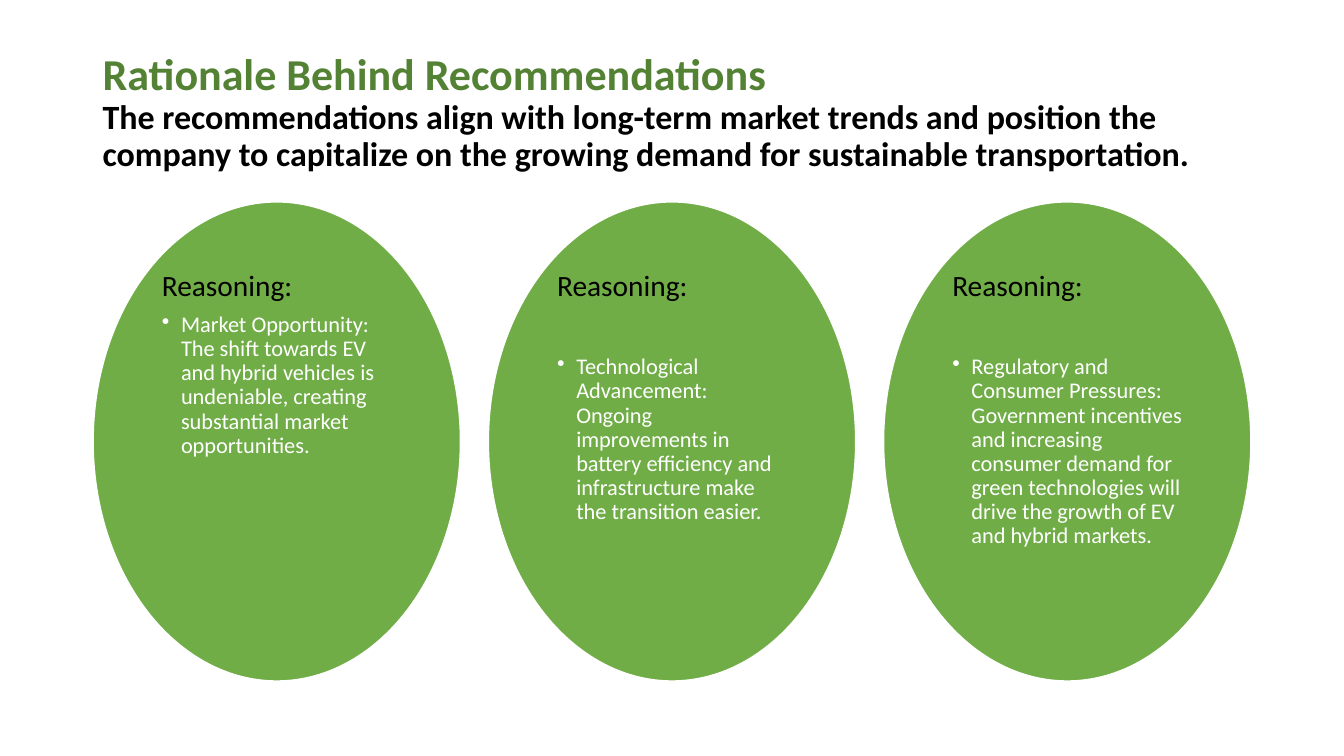
from lxml import etree
from pptx import Presentation
from pptx.dml.color import RGBColor
from pptx.enum.shapes import MSO_SHAPE
from pptx.enum.text import MSO_ANCHOR
from pptx.oxml.ns import qn
from pptx.util import Inches, Pt

OVAL = MSO_SHAPE.OVAL
MIDDLE = MSO_ANCHOR.MIDDLE

GREEN = RGBColor(0x70, 0xAD, 0x47)
DARK_GREEN = RGBColor(0x54, 0x82, 0x35)
BLACK = RGBColor(0, 0, 0)
WHITE = RGBColor(255, 255, 255)
FONT = "Calibri"

TITLE = "Rationale Behind Recommendations"
SUBTITLE = ("The recommendations align with long-term market trends and position the "
            "company to capitalize on the growing demand for sustainable transportation.")
HEADING = "Reasoning:"
# Each reason with the space in points between its heading and its bullet
REASONS = [
    ("Market Opportunity: The shift towards EV and hybrid vehicles is undeniable, "
     "creating substantial market opportunities.", 7.35),
    ("Technological Advancement: Ongoing improvements in battery efficiency and "
     "infrastructure make the transition easier.", 37.5),
    ("Regulatory and Consumer Pressures: Government incentives and increasing consumer "
     "demand for green technologies will drive the growth of EV and hybrid markets.", 37.5),
]

OVAL_LEFT, OVAL_TOP, OVAL_WIDTH, OVAL_HEIGHT = 0.92, 2.0, 3.65, 4.76
OVAL_PITCH = 3.92
TEXT_WIDTH, TEXT_HEIGHT = 2.58, 3.36


def style_font(font, size, color, bold=False):
    font.name = FONT
    font.size = Pt(size)
    font.color.rgb = color
    font.bold = bold


def add_text_box(page, left, top, width, height):
    box = page.shapes.add_textbox(Inches(left), Inches(top), Inches(width), Inches(height))
    box.text_frame.word_wrap = True
    return box.text_frame


def add_title(page):
    frame = add_text_box(page, 0.92, 0.4, 11.5, 1.45)
    frame.vertical_anchor = MIDDLE
    para = frame.paragraphs[0]
    para.line_spacing = 0.9
    span = para.add_run()
    span.text = TITLE
    style_font(span.font, 31.5, DARK_GREEN, bold=True)
    para.add_line_break()
    span = para.add_run()
    span.text = SUBTITLE
    style_font(span.font, 24.3, BLACK, bold=True)


def add_oval(page, left):
    oval = page.shapes.add_shape(OVAL, Inches(left), Inches(OVAL_TOP),
                                 Inches(OVAL_WIDTH), Inches(OVAL_HEIGHT))
    oval.shadow.inherit = False
    oval.fill.solid()
    oval.fill.fore_color.rgb = GREEN
    oval.line.color.rgb = WHITE
    oval.line.width = Pt(1.5)


def make_bullet(para):
    properties = para._p.get_or_add_pPr()
    properties.set("marL", str(Inches(0.19)))
    properties.set("indent", str(-Inches(0.19)))
    etree.SubElement(properties, qn("a:buChar")).set("char", "•")


def fill_para(para, text, size, color, space_after):
    para.text = text
    para.line_spacing = 0.9
    para.space_after = Pt(space_after)
    style_font(para.font, size, color)


def add_reason(page, left, reason, heading_gap):
    add_oval(page, left)
    text_left = left + (OVAL_WIDTH - TEXT_WIDTH) / 2
    frame = add_text_box(page, text_left, 2.69, TEXT_WIDTH, TEXT_HEIGHT)
    frame.margin_left = frame.margin_right = Inches(0.15)
    frame.margin_top = frame.margin_bottom = 0
    fill_para(frame.paragraphs[0], HEADING, 21, BLACK, heading_gap)
    bullet = frame.add_paragraph()
    fill_para(bullet, reason, 16, WHITE, 2.4)
    make_bullet(bullet)


def main():
    deck = Presentation()
    deck.slide_width, deck.slide_height = Inches(13.33), Inches(7.5)
    page = deck.slides.add_slide(deck.slide_layouts[6])
    add_title(page)
    for index, (reason, heading_gap) in enumerate(REASONS):
        add_reason(page, OVAL_LEFT + index * OVAL_PITCH, reason, heading_gap)
    deck.save("out.pptx")


if __name__ == "__main__":
    main()
